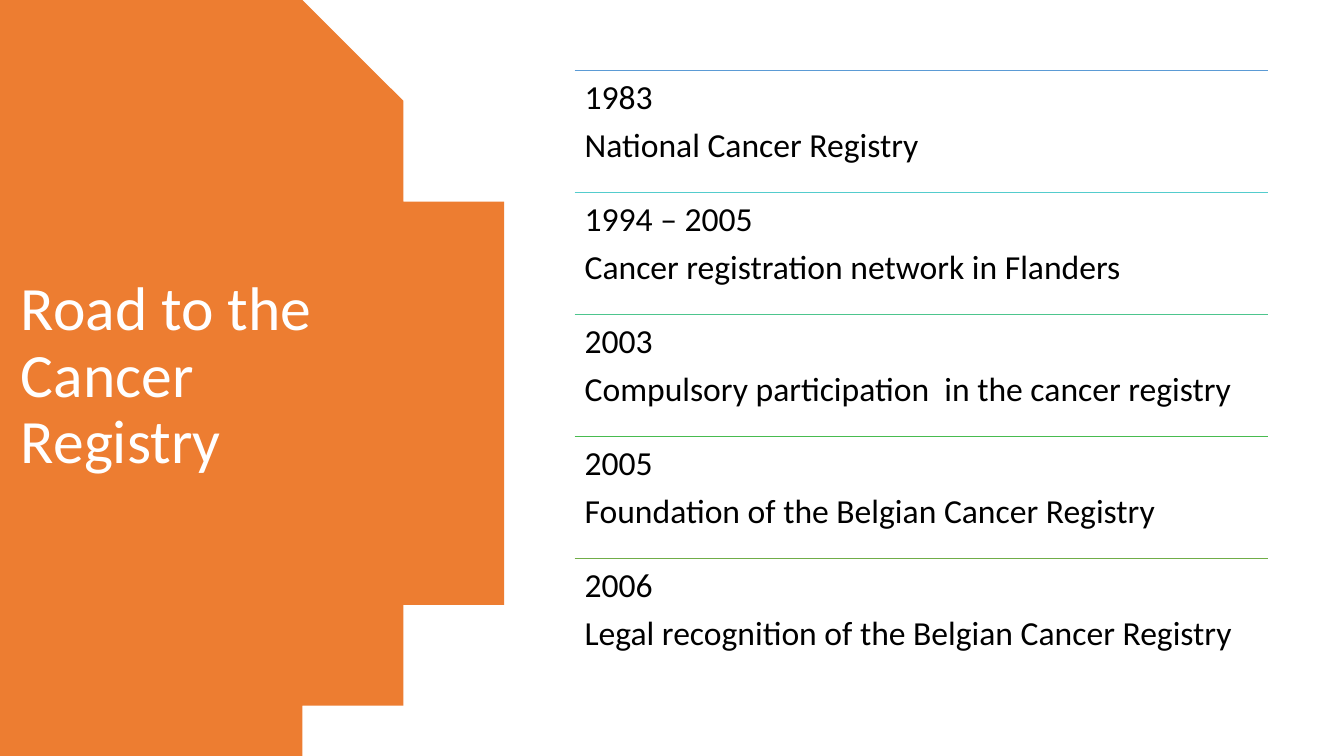
from math import asin, cos, sin

from lxml.etree import SubElement
from pptx import Presentation
from pptx.dml.color import RGBColor
from pptx.enum.shapes import MSO_CONNECTOR as Connector
from pptx.enum.text import MSO_ANCHOR as Anchor
from pptx.oxml.ns import qn
from pptx.util import Inches, Pt

COLORS = {
    "panel": "ED7D31",
    "title": "FFFFFF",
    "text": "000000",
    "1983": "5B9BD5",
    "1994 – 2005": "54CCCD",
    "2003": "4DC58D",
    "2005": "48BB4F",
    "2006": "70AD47",
}

MILESTONES = [
    ("1983", "National Cancer Registry"),
    ("1994 – 2005", "Cancer registration network in Flanders"),
    ("2003", "Compulsory participation  in the cancer registry"),
    ("2005", "Foundation of the Belgian Cancer Registry"),
    ("2006", "Legal recognition of the Belgian Cancer Registry"),
]


class RegistryPage:
    font = "Calibri"

    def __init__(self, deck):
        self.page = deck.slides.add_slide(deck.slide_layouts[6])

    def color(self, name):
        return RGBColor.from_string(COLORS[name])

    def round_panel(self, height, center_x, radius, steps=80):
        """Fill the left side with a panel whose right edge is a circular arc."""
        middle = height / 2
        limit = asin(middle / radius)
        angles = [limit * (2 * step / steps - 1) for step in range(steps + 1)]
        arc = [(center_x + radius * cos(angle), middle + radius * sin(angle))
               for angle in angles]
        builder = self.page.shapes.build_freeform(0, 0, scale=Inches(1))
        builder.add_line_segments(arc + [(0, height)], close=True)
        panel = builder.convert_to_shape()
        panel.shadow.inherit = False
        panel.fill.solid()
        panel.fill.fore_color.rgb = self.color("panel")
        panel.line.fill.background()

    def rule(self, left, top, width, color):
        line = self.page.shapes.add_connector(
            Connector.STRAIGHT, Inches(left), Inches(top),
            Inches(left + width), Inches(top))
        line.line.color.rgb = self.color(color)
        line.line.width = Pt(1)
        SubElement(line._element.spPr, qn("a:effectLst"))

    def text(self, lines, left, top, width, height, size, color,
             anchor=Anchor.TOP, inset=0.1, space_after=0):
        box = self.page.shapes.add_textbox(
            Inches(left), Inches(top), Inches(width), Inches(height))
        frame = box.text_frame
        frame.word_wrap = True
        frame.vertical_anchor = anchor
        frame.margin_left = frame.margin_right = Inches(0.1)
        frame.margin_top = frame.margin_bottom = Inches(inset)
        frame.text = "\n".join(lines)
        for para in frame.paragraphs:
            para.line_spacing = 0.9
            para.space_after = Pt(space_after)
            for span in para.runs:
                span.font.name = self.font
                span.font.size = Pt(size)
                span.font.color.rgb = self.color(color)


def main():
    deck = Presentation()
    deck.slide_width, deck.slide_height = Inches(13.33), Inches(7.5)
    page = RegistryPage(deck)

    page.round_panel(height=7.5, center_x=0.53, radius=4.4)
    page.text(["Road to the Cancer Registry"], 0.11, 0.7, 3.95, 6.09,
              size=44, color="title", anchor=Anchor.MIDDLE, inset=0.05)

    left, top, width, row_height = 5.7, 0.7, 6.88, 1.21
    for index, (year, event) in enumerate(MILESTONES):
        row_top = top + index * row_height
        page.rule(left, row_top, width, color=year)
        page.text([year, event], left, row_top, width, row_height,
                  size=24, color="text", space_after=8)

    deck.save("out.pptx")


if __name__ == "__main__":
    main()
